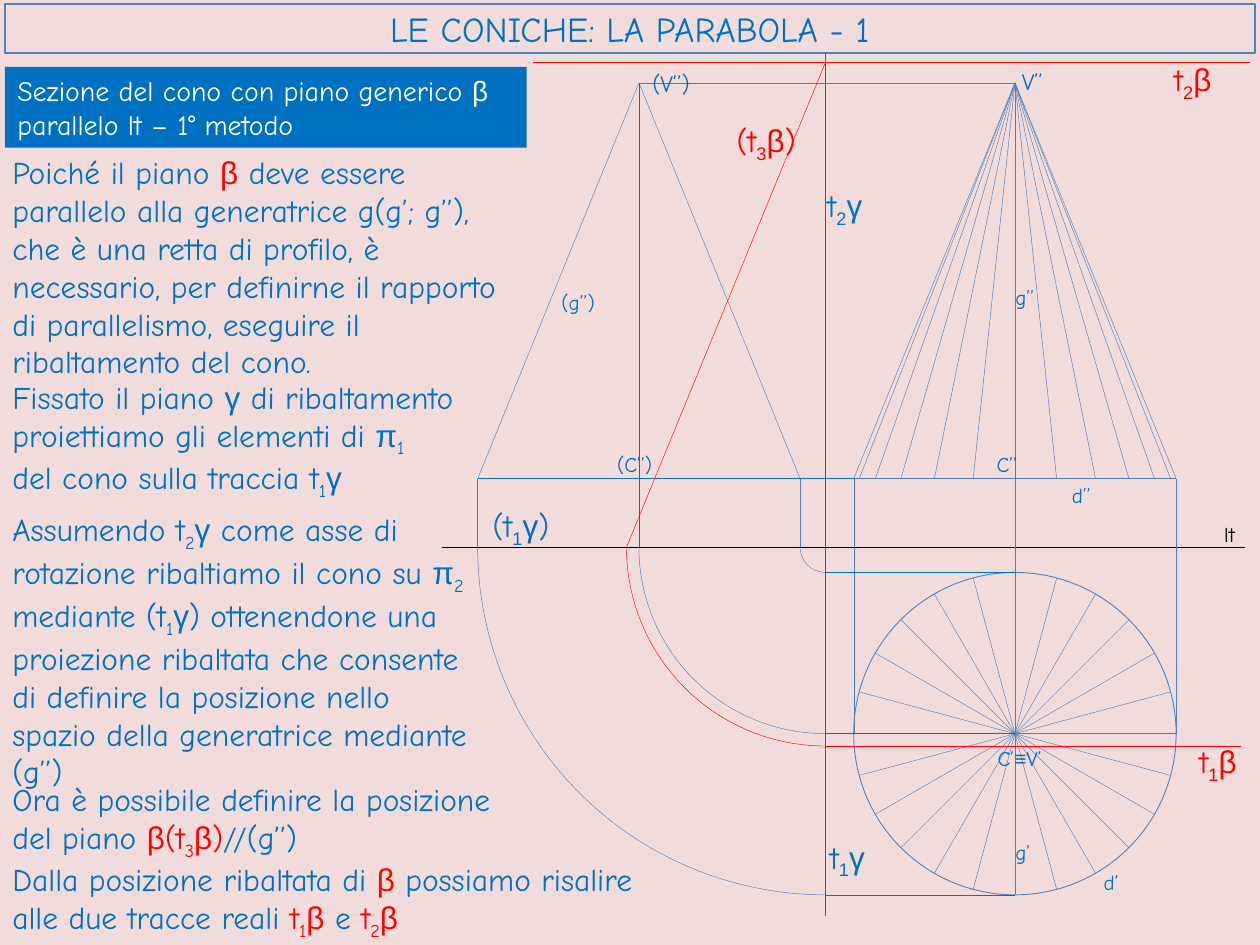
import itertools
import math

import pptx
import pptx.dml.color
import pptx.enum.shapes
import pptx.enum.text
import pptx.oxml.ns
import pptx.util
from lxml import etree

Cm, Pt = pptx.util.Cm, pptx.util.Pt
MSO = pptx.enum.shapes.MSO_SHAPE
ALIGN = pptx.enum.text.PP_ALIGN
ANCHOR = pptx.enum.text.MSO_ANCHOR

COLORS = {
    "background": "F2DCDB", "text": "0070C0", "white": "FFFFFF", "black": "000000",
    "red": "FF0000", "thin": "4B7EBC", "outline": "4F81BD",
}
MAIN_FONT, SYMBOL_FONT = "Comic Neue", "Arial"
SYMBOLS = "βγπ≡"


def rgb(name):
    return pptx.dml.color.RGBColor.from_string(COLORS[name])


def styled_chars(text, color, sub_font):
    """Yield (char, (font, subscript, colour)); _ lowers the next char, * toggles red."""
    red = sub = False
    for ch in text:
        if ch == "*":
            red = not red
        elif ch == "_":
            sub = True
        else:
            font = SYMBOL_FONT if ch in SYMBOLS else sub_font if sub else MAIN_FONT
            yield ch, (font, sub, "red" if red else color)
            sub = False


class Board:
    """Holds the slide and draws each kind of element on it."""

    def __init__(self, prs):
        self.slide = prs.slides.add_slide(prs.slide_layouts[6])
        self.slide.background.fill.solid()
        self.slide.background.fill.fore_color.rgb = rgb("background")

    def line(self, start, end, color="thin", width=0.25):
        points = [Cm(v) for v in (*start, *end)]
        sp = self.slide.shapes.add_connector(pptx.enum.shapes.MSO_CONNECTOR.STRAIGHT, *points)
        sp.line.color.rgb = rgb(color)
        sp.line.width = Pt(width)
        etree.SubElement(sp._element.spPr, pptx.oxml.ns.qn("a:effectLst"))

    def shape(self, kind, x, y, w, h, fill=None, line=None, width=0.25):
        sp = self.slide.shapes.add_shape(kind, Cm(x), Cm(y), Cm(w), Cm(h))
        sp.shadow.inherit = False
        for fmt, color in ((sp.fill, fill), (sp.line.fill, line)):
            if color:
                fmt.solid()
                fmt.fore_color.rgb = rgb(color)
            else:
                fmt.background()
        if line:
            sp.line.width = Pt(width)
        return sp

    def circle(self, center, radius, **style):
        x, y = center
        return self.shape(MSO.OVAL, x - radius, y - radius, 2 * radius, 2 * radius, **style)

    def quarter_arc(self, center, radius, color="thin"):
        """Arc from straight below the centre to its left."""
        x, y = center
        sp = self.shape(MSO.ARC, x - radius, y - radius, 2 * radius, 2 * radius, line=color)
        sp.adjustments[0], sp.adjustments[1] = 54, 108  # 90 and 180 degrees

    def fill_text(self, sp, paragraphs, size, color="text", sub_font=MAIN_FONT,
                  align=ALIGN.LEFT, anchor=ANCHOR.TOP):
        tf = sp.text_frame
        for name, value in {"word_wrap": True, "vertical_anchor": anchor}.items():
            setattr(tf, name, value)
        for i, text in enumerate(paragraphs):
            p = tf.add_paragraph() if i else tf.paragraphs[0]
            p.alignment = align
            chars = styled_chars(text, color, sub_font)
            for (font, sub, tone), group in itertools.groupby(chars, key=lambda c: c[1]):
                r = p.add_run()
                r.text = "".join(ch for ch, _ in group)
                for name, value in {"name": font, "size": Pt(size)}.items():
                    setattr(r.font, name, value)
                r.font.color.rgb = rgb(tone)
                if sub:
                    r.font._element.set("baseline", "-25000")

    def text(self, x, y, w, h, paragraphs, size, **style):
        sp = self.slide.shapes.add_textbox(Cm(x), Cm(y), Cm(w), Cm(h))
        self.fill_text(sp, paragraphs, size, **style)


# Geometry in cm
LT_Y, BASE_Y, FOLD_X = 11.03, 9.65, 16.64
CX, CY, RADIUS, APEX_Y = 20.46, 14.79, 3.25, 1.67
BETA_TOP, BETA_BOTTOM = 1.26, 15.04

LABELS = [  # text, left, top, width, size, colour
    ("C’’", 19.84, 8.97, 1.32, 12, "text"),
    ("C’≡V’", 19.86, 14.91, 1.5, 12, "text"),
    ("V’’", 20.35, 1.22, 1.32, 13.5, "text"),
    ("g’’", 20.22, 5.61, 0.97, 12, "text"),
    ("g’", 20.22, 16.79, 0.91, 12, "text"),
    ("lt", 24.43, 10.39, 0.97, 12, "black"),
    ("d’’", 21.36, 9.6, 0.97, 12, "text"),
    ("d’", 22, 17.4, 0.91, 12, "text"),
    ("(V’’)", 12.9, 1.27, 1.4, 13.5, "text"),
    ("(g’’)", 11.07, 5.72, 1.25, 12, "text"),
    ("(C’’)", 12.19, 8.97, 1.32, 12, "text"),
    ("t_2β", 23.42, 1.09, 1.4, 18, "red"),
    ("t_1β", 23.93, 14.83, 1.47, 18, "red"),
    ("(t_3β)", 14.6, 2.31, 1.9, 18, "red"),
    ("t_2γ", 16.43, 3.63, 1.4, 18, "text"),
    ("t_1γ", 16.48, 16.76, 1.47, 18, "text"),
    ("(t_1γ)", 9.68, 10.08, 1.8, 18, "text"),
]

BODY = [  # top, width, height, paragraphs
    (2.97, 10.41, 4.88, [
        "Poiché il piano *β* deve essere parallelo alla generatrice g(g’; g’’), che è una "
        "retta di profilo, è necessario, per definirne il rapporto di parallelismo, "
        "eseguire il ribaltamento del cono."]),
    (7.49, 10.19, 2.64, [
        "Fissato il piano γ di ribaltamento proiettiamo gli elementi di π_1",
        "del cono sulla traccia t_1γ"]),
    (10.16, 9.98, 5.64, [
        "Assumendo t_2γ come asse di rotazione ribaltiamo il cono su π_2 mediante (t_1γ) "
        "ottenendone una proiezione ribaltata che consente di definire la posizione nello "
        "spazio della generatrice mediante (g’’)"]),
    (15.6, 12.85, 1.8, [
        "Ora è possibile definire la posizione",
        "del piano *β(t_3β)*//(g’’)"]),
    (17.22, 14.1, 1.8, [
        "Dalla posizione ribaltata di *β* possiamo risalire alle due tracce reali "
        "*t_1β* e *t_2β*"]),
]


def draw_cone(board):
    """Front and plan views, with a generator every 15 degrees."""
    center, apex = (CX, CY), (CX, APEX_Y)
    board.circle(center, RADIUS, line="outline", width=0.5)
    for step in range(24):
        angle = math.radians(15 * step)
        x = CX + RADIUS * math.cos(angle)
        board.line(center, (x, CY + RADIUS * math.sin(angle)))
        if step <= 12 and step != 6:
            board.line(apex, (x, BASE_Y))
    board.line(apex, center)
    for x in (CX - RADIUS, CX + RADIUS):
        board.line((x, CY), (x, BASE_Y))
    board.line((CX - RADIUS, BASE_Y), (CX + RADIUS, BASE_Y), width=0.5)


def draw_folded_cone(board):
    """Turn the plan about the fold axis onto the front plane."""
    fold = (FOLD_X, LT_Y)
    axis_x = FOLD_X - (CY - LT_Y)
    apex = (axis_x, APEX_Y)
    board.line((FOLD_X, 1.07), (FOLD_X, 18.47), "text")
    for y in (CY - RADIUS, CY, CY + RADIUS):
        board.line((FOLD_X, y), (CX, y), "text")
        board.quarter_arc(fold, y - LT_Y)
        if y != CY:
            edge = FOLD_X - (y - LT_Y)
            board.line((edge, LT_Y), (edge, BASE_Y))
            board.line((edge, BASE_Y), apex)
    board.line(apex, (axis_x, LT_Y), "text")
    board.line((axis_x - RADIUS, BASE_Y), (CX - RADIUS, BASE_Y), "text")
    board.line(apex, (CX, APEX_Y))


def draw_beta(board):
    reach = BETA_BOTTOM - LT_Y
    board.line((FOLD_X - reach, LT_Y), (FOLD_X, BETA_TOP), "red")
    board.quarter_arc((FOLD_X, LT_Y), reach, "red")
    board.line((FOLD_X, BETA_BOTTOM), (25.02, BETA_BOTTOM), "red")
    board.line((10.74, BETA_TOP), (25.2, BETA_TOP), "red")


def main():
    prs = pptx.Presentation()
    prs.slide_width, prs.slide_height = Cm(25.4), Cm(19.05)
    board = Board(prs)
    title = board.shape(MSO.RECTANGLE, 0.1, 0.08, 25.2, 0.99, line="outline", width=0.75)
    board.fill_text(title, ["LE CONICHE: LA PARABOLA - 1"], 20,
                    align=ALIGN.CENTER, anchor=ANCHOR.MIDDLE)
    board.line((8.92, LT_Y), (25.1, LT_Y), "black")
    draw_cone(board)
    draw_folded_cone(board)
    draw_beta(board)
    heading = board.shape(MSO.RECTANGLE, 0.1, 1.35, 10.52, 1.63, fill="text")
    board.fill_text(heading, ["Sezione del cono con piano generico β parallelo lt – 1° metodo"],
                    16, color="white", anchor=ANCHOR.MIDDLE)
    for text, x, y, w, size, color in LABELS:
        board.text(x, y, w, 0.05 * size + 0.15, [text], size, color=color, sub_font=SYMBOL_FONT)
    for y, w, h, paragraphs in BODY:
        board.text(0, y, w, h, paragraphs, 18)
    prs.save("out.pptx")


if __name__ == "__main__":
    main()
